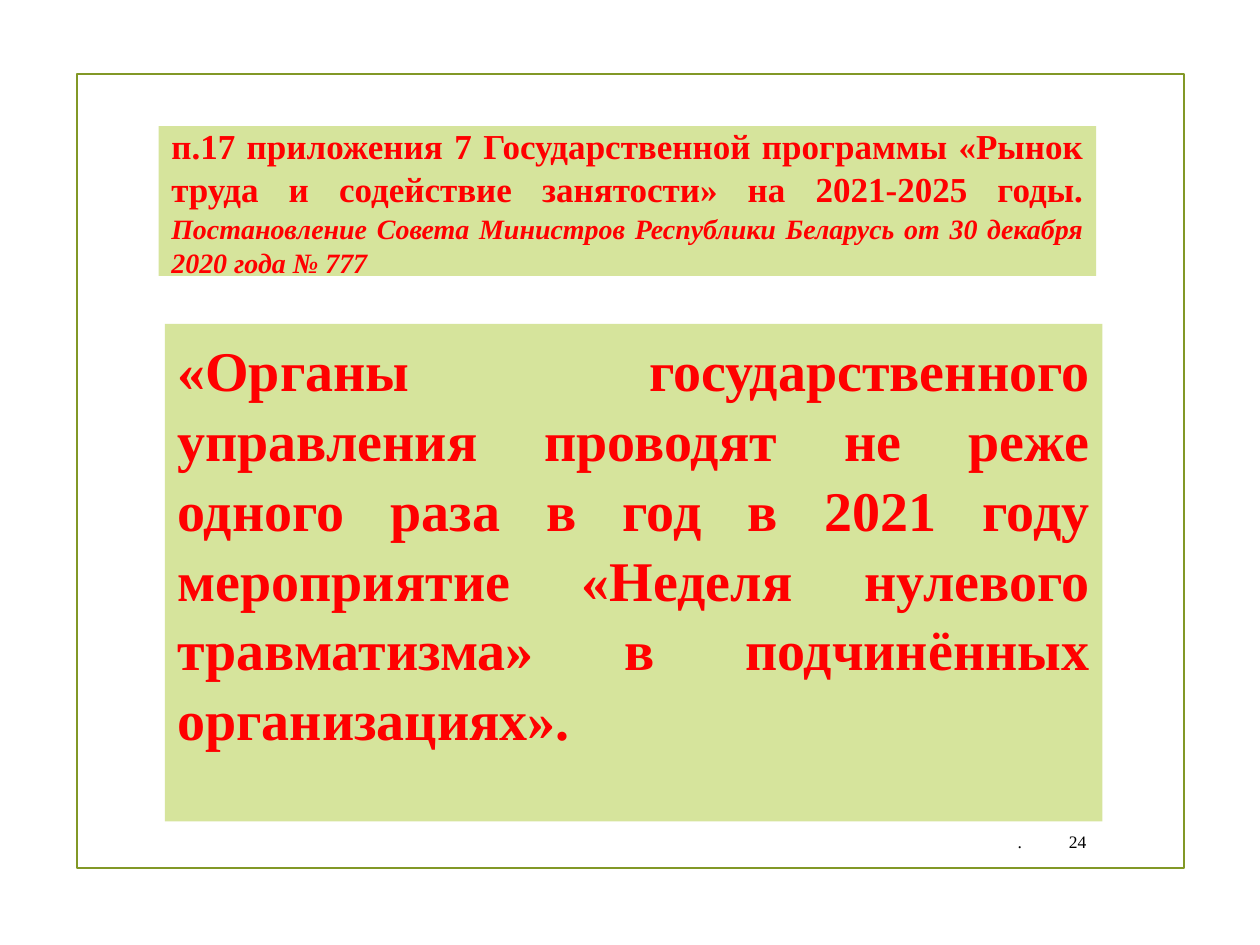
from pptx import Presentation, util as u
from pptx.dml.color import RGBColor
from pptx.enum import shapes, text

PX = 9144
FONT = "Times New Roman"
HUES = {"frame": "829826", "panel": "D6E49C", "red": "FF0000", "ink": "000000"}


def px(n):
    return u.Emu(n * PX)


def hue(name):
    return RGBColor.from_string(HUES[name])


def place(shape, box):
    shape.left, shape.top, shape.width, shape.height = map(px, box)


def fill(shape, name):
    shape.fill.solid()
    shape.fill.fore_color.rgb = hue(name)


def write(par, words, size, color="red", bold=True, italic=False):
    run = par.add_run()
    run.text = words
    font = run.font
    font.name, font.size = FONT, u.Pt(size)
    font.bold, font.italic = bold, italic
    font.color.rgb = hue(color)


def setup(shape, align, anchor, space=1.0):
    frame = shape.text_frame
    frame.word_wrap = True
    frame.auto_size = text.MSO_AUTO_SIZE.NONE
    frame.vertical_anchor = anchor
    par = frame.paragraphs[0]
    par.alignment = align
    par.line_spacing = space
    return par


def border(slide, box):
    rect = slide.shapes.add_shape(shapes.MSO_SHAPE.RECTANGLE, *map(px, box))
    rect.shadow.inherit = False
    rect.fill.background()
    rect.line.color.rgb = hue("frame")
    rect.line.width = u.Pt(1.25)


def heading(slide, box):
    title = slide.shapes.title
    place(title, box)
    fill(title, "panel")
    par = setup(title, text.PP_ALIGN.JUSTIFY, text.MSO_ANCHOR.MIDDLE, 1.04)
    write(par, "п.17 приложения 7 Государственной программы «Рынок труда "
               "и содействие занятости» на 2021-2025 годы.", 20)
    par.add_line_break()
    write(par, "Постановление Совета Министров Республики Беларусь "
               "от 30 декабря 2020 года № 777", 16, italic=True)


def body(slide, box):
    panel = slide.shapes.add_textbox(*map(px, box))
    fill(panel, "panel")
    par = setup(panel, text.PP_ALIGN.JUSTIFY, text.MSO_ANCHOR.TOP, 1.04)
    panel.text_frame.margin_top = px(7)
    write(par, "«Органы государственного управления проводят не реже одного "
               "раза в год в 2021 году мероприятие «Неделя нулевого "
               "травматизма» в подчинённых организациях».", 32)


def footer(slide, box):
    left, top, width, height = box
    for words, shift, wide in ((".", 0, 126), ("24", width - 43, 43)):
        note = slide.shapes.add_textbox(
            *map(px, (left + shift, top, wide, height)))
        par = setup(note, text.PP_ALIGN.RIGHT, text.MSO_ANCHOR.MIDDLE)
        write(par, words, 10, color="ink", bold=False)


def main():
    deck = Presentation()
    deck.slide_width, deck.slide_height = px(1000), px(750)
    slide = deck.slides.add_slide(deck.slide_layouts[5])
    border(slide, (61, 59, 879, 630))
    heading(slide, (126, 100, 744, 119))
    body(slide, (131, 257, 744, 395))
    footer(slide, (695, 652, 177, 31))
    deck.save("out.pptx")


if __name__ == "__main__":
    main()
